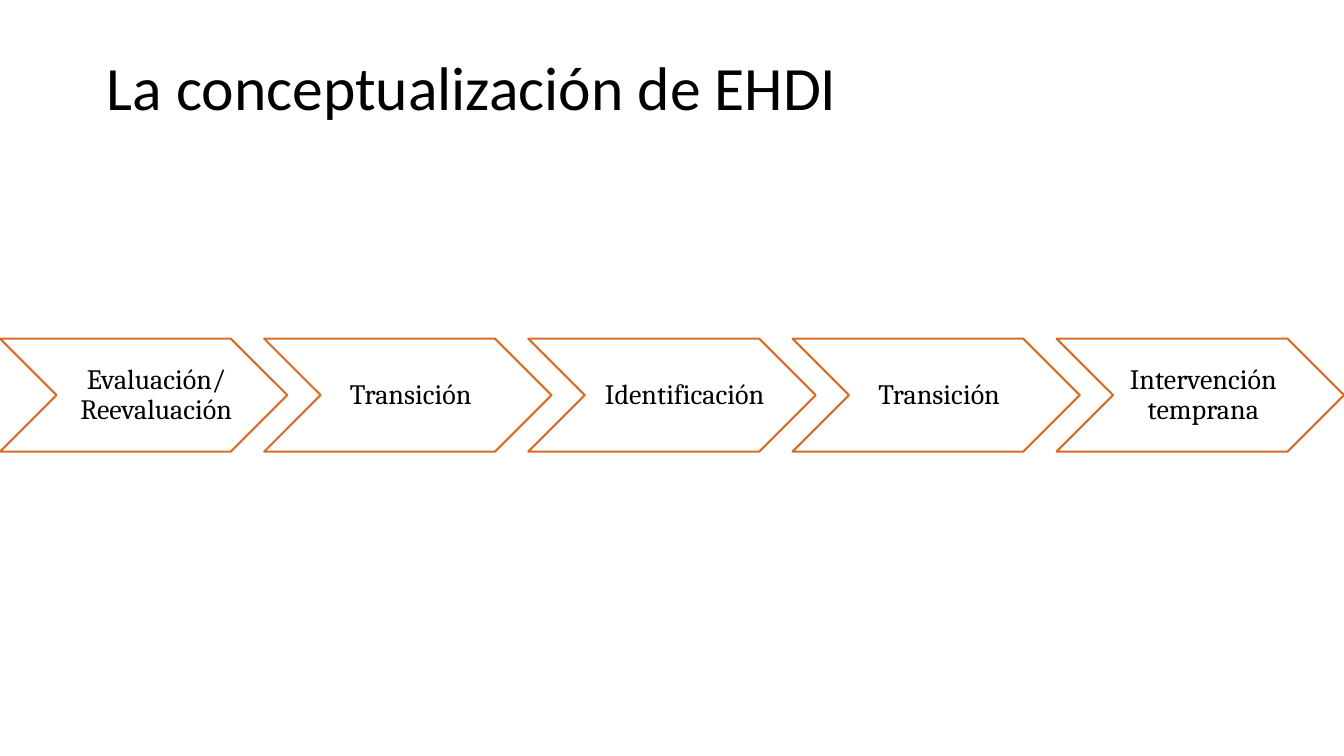
import pptx
import pptx.util
import pptx.dml.color
import pptx.enum.shapes
import pptx.enum.text

Inches, Pt = pptx.util.Inches, pptx.util.Pt
RGBColor = pptx.dml.color.RGBColor
ALIGN = pptx.enum.text.PP_ALIGN
ANCHOR = pptx.enum.text.MSO_ANCHOR

TITLE = "La conceptualización de EHDI"
# Label and width of its text area
STEPS = [
    ("Evaluación/ Reevaluación", 1.92),
    ("Transición", 1.73),
    ("Identificación", 1.92),
    ("Transición", 1.73),
    ("Intervención temprana", 1.73),
]

WHITE = RGBColor(0xFF, 0xFF, 0xFF)
BLACK = RGBColor(0, 0, 0)
ORANGE = RGBColor(0xD6, 0x6E, 0x29)

TOP, WIDE, HIGH, PITCH = 3.36, 2.85, 1.12, 2.62
INDENT = HIGH / 2


def write(shape, text, font, size, align, anchor, insets):
    frame = shape.text_frame
    frame.text = text
    frame.word_wrap = True
    frame.auto_size = pptx.enum.text.MSO_AUTO_SIZE.NONE
    frame.vertical_anchor = anchor
    (frame.margin_left, frame.margin_top,
     frame.margin_right, frame.margin_bottom) = map(Inches, insets)
    line = frame.paragraphs[0]
    line.alignment = align
    line.line_spacing = 0.9
    face = line.runs[0].font
    face.name, face.size = font, Pt(size)
    face.color.rgb = BLACK


def add_step(shapes, left, label, width):
    arrow = shapes.add_shape(
        pptx.enum.shapes.MSO_SHAPE.CHEVRON,
        Inches(left), Inches(TOP), Inches(WIDE), Inches(HIGH))
    arrow.adjustments[0] = 0.5
    arrow.shadow.inherit = False
    arrow.fill.solid()
    arrow.fill.fore_color.rgb = WHITE
    arrow.line.color.rgb = ORANGE
    arrow.line.width = Pt(1.5)
    box = shapes.add_textbox(
        Inches(left + INDENT), Inches(TOP), Inches(width), Inches(HIGH))
    write(box, label, "Cambria", 20, ALIGN.CENTER, ANCHOR.MIDDLE,
          (0.09, 0.03, 0.03, 0.03))


def main():
    deck = pptx.Presentation()
    deck.slide_width, deck.slide_height = Inches(13.33), Inches(7.5)
    slide = deck.slides.add_slide(deck.slide_layouts[5])

    title = slide.shapes.title
    title.left, title.top = Inches(0.96), Inches(0.52)
    title.width, title.height = Inches(9.19), Inches(1.42)
    write(title, TITLE, "Calibri", 44, ALIGN.LEFT, ANCHOR.TOP,
          (0.1, 0.05, 0.1, 0.05))

    chain = slide.shapes.add_group_shape()
    for i, (label, width) in enumerate(STEPS):
        add_step(chain.shapes, i * PITCH, label, width)

    deck.save("out.pptx")


if __name__ == "__main__":
    main()
